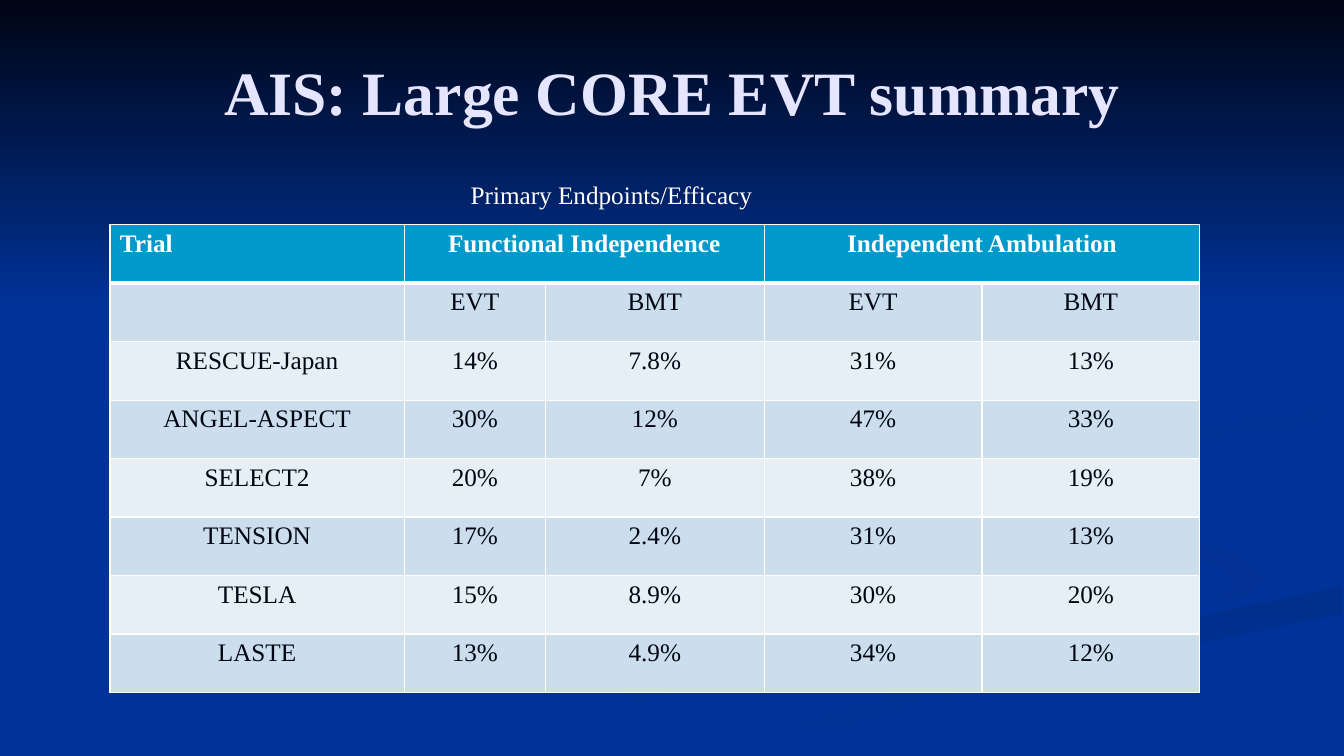
from lxml import etree
from pptx import Presentation
from pptx.dml.color import RGBColor
from pptx.enum.text import MSO_ANCHOR, PP_ALIGN
from pptx.oxml.ns import qn
from pptx.util import Inches, Pt

TITLE = "AIS: Large CORE EVT summary"
CAPTION = "Primary Endpoints/Efficacy"
OUTCOMES = ["Functional Independence", "Independent Ambulation"]
ARMS = ["EVT", "BMT"]
TRIALS = [
    ("RESCUE-Japan", "14%", "7.8%", "31%", "13%"),
    ("ANGEL-ASPECT", "30%", "12%", "47%", "33%"),
    ("SELECT2", "20%", "7%", "38%", "19%"),
    ("TENSION", "17%", "2.4%", "31%", "13%"),
    ("TESLA", "15%", "8.9%", "30%", "20%"),
    ("LASTE", "13%", "4.9%", "34%", "12%"),
]
COLUMN_WIDTHS = [2.92, 1.4, 2.17, 2.16, 2.16]
ROW_HEIGHT = 0.58

FONT = "Times New Roman"
NAVY, BLUE, WHITE, LAVENDER = "000514", "003399", "FFFFFF", "E5E5FF"
HEADER_FILL = "0099CC"
BAND_FILLS = ["CCDEEC", "E7EFF6"]

# Background swooshes, back to front: first colour, last colour, angle, outline
SWOOSHES = [
    (BLUE, "003193", 0, [
        (10.42, 5.53), (8.18, 4.96), (7.67, 4.59), (7.74, 4.84), (10.27, 5.51), (10.44, 5.74),
        (9.13, 6.13), (6.11, 6.74), (4, 7.49), (4.82, 7.49), (7.09, 6.74), (10.39, 6.05),
        (10.67, 5.81)]),
    (BLUE, "003193", 45, [
        (12.57, 5.7), (12.25, 5.47), (10.1, 4.98), (9.65, 4.64), (9.85, 4.94), (11.57, 5.44),
        (12.09, 5.62), (12.24, 5.81), (11.91, 6.05), (12.43, 5.89)]),
    ("002F8C", BLUE, 90, [
        (6.71, 7.49), (7.62, 7.49), (9.26, 6.92), (13.31, 6.09), (13.31, 5.81), (10.19, 6.47),
        (8.4, 6.93)]),
    (BLUE, BLUE, 0, [
        (9.66, 4.64), (10.12, 4.98), (12.27, 5.47), (12.57, 5.7), (12.42, 5.9), (9.39, 6.55),
        (6.36, 7.49), (6.93, 7.47), (10.21, 6.47), (13.32, 5.81), (13.32, 5.38), (11.1, 4.98),
        (10.42, 4.63), (11.13, 4.3), (13.32, 4.02), (13.32, 3.87), (10.51, 4.22)]),
    ("003091", BLUE, 45, [
        (10.42, 4.6), (11.01, 4.96), (10.73, 4.72), (11.45, 4.43), (13.31, 4.2), (13.31, 4.02),
        (10.95, 4.34)]),
    ("002F8E", BLUE, 45, [
        (9.11, 4.3), (11.39, 3.91), (11.91, 3.44), (11.24, 2.75), (10.17, 2.33), (11.85, 3.35),
        (11.06, 3.82), (8.2, 4.29), (7.69, 4.62), (8.29, 5), (7.91, 4.7)]),
    (NAVY, BLUE, 90, [(0, 0), (0, 3.08), (13.33, 3.08), (13.33, 0)]),
]


def rgb(color):
    return RGBColor.from_string(color)


def write(frame, text, size=18, color=NAVY, bold=False, align=PP_ALIGN.CENTER):
    paragraph = frame.paragraphs[0]
    paragraph.alignment = align
    run = paragraph.add_run()
    run.text = text
    run.font.name, run.font.size, run.font.bold = FONT, Pt(size), bold
    run.font.color.rgb = rgb(color)


def add_swoosh(slide, first, last, angle, outline):
    points = [(Inches(x), Inches(y)) for x, y in outline]
    builder = slide.shapes.build_freeform(*points[0])
    builder.add_line_segments(points[1:], close=True)
    swoosh = builder.convert_to_shape()
    swoosh.shadow.inherit = False
    swoosh.line.fill.background()
    if first == last:
        swoosh.fill.solid()
        swoosh.fill.fore_color.rgb = rgb(first)
        return
    swoosh.fill.gradient()
    swoosh.fill.gradient_angle = -angle % 360
    for stop, color in zip(swoosh.fill.gradient_stops, (first, last)):
        stop.color.rgb = rgb(color)


def style_cell(cell, fill, top, bottom):
    """Fill a cell and give it white borders, with top and bottom widths in points."""
    properties = cell._tc.get_or_add_tcPr()
    for side, width in (("L", 1), ("R", 1), ("T", top), ("B", bottom)):
        border = etree.SubElement(properties, qn("a:ln" + side), w=str(Pt(width)))
        paint = etree.SubElement(border, qn("a:solidFill"))
        etree.SubElement(paint, qn("a:srgbClr"), val=WHITE)
    cell.fill.solid()
    cell.fill.fore_color.rgb = rgb(fill)


def add_results(slide):
    header = ["Trial"] + [text for outcome in OUTCOMES for text in (outcome, "")]
    rows = [header, [""] + ARMS * len(OUTCOMES), *TRIALS]
    results = slide.shapes.add_table(
        len(rows), len(COLUMN_WIDTHS), Inches(1.09), Inches(2.23),
        Inches(sum(COLUMN_WIDTHS)), Inches(ROW_HEIGHT * len(rows))).table
    for column, width in zip(results.columns, COLUMN_WIDTHS):
        column.width = Inches(width)
    for r, row in enumerate(rows):
        results.rows[r].height = Inches(ROW_HEIGHT)
        is_header = r == 0
        for c, text in enumerate(row):
            cell = results.cell(r, c)
            style_cell(cell, HEADER_FILL if is_header else BAND_FILLS[(r - 1) % 2],
                       top=3 if r == 1 else 1, bottom=3 if is_header else 1)
            if text:
                write(cell.text_frame, text, color=WHITE if is_header else NAVY, bold=is_header,
                      align=PP_ALIGN.LEFT if text == "Trial" else PP_ALIGN.CENTER)
    for c in range(1, len(COLUMN_WIDTHS), len(ARMS)):
        results.cell(0, c).merge(results.cell(0, c + len(ARMS) - 1))


def main():
    deck = Presentation()
    deck.slide_width, deck.slide_height = Inches(13.33), Inches(7.5)
    slide = deck.slides.add_slide(deck.slide_layouts[5])
    slide.background.fill.solid()
    slide.background.fill.fore_color.rgb = rgb(BLUE)
    for swoosh in SWOOSHES:
        add_swoosh(slide, *swoosh)

    title = slide.shapes.title
    title.left, title.top, title.width, title.height = map(Inches, (0.92, 0.18, 11.5, 1.45))
    title.text_frame.vertical_anchor = MSO_ANCHOR.MIDDLE
    write(title.text_frame, TITLE, size=44, color=LAVENDER, bold=True)
    slide.shapes._spTree.append(title._element)  # bring in front of the swooshes

    add_results(slide)
    caption = slide.shapes.add_textbox(*map(Inches, (4.57, 1.73, 3.26, 0.4))).text_frame
    caption.word_wrap = True
    write(caption, CAPTION, color=WHITE, align=PP_ALIGN.LEFT)
    deck.save("out.pptx")


if __name__ == "__main__":
    main()
